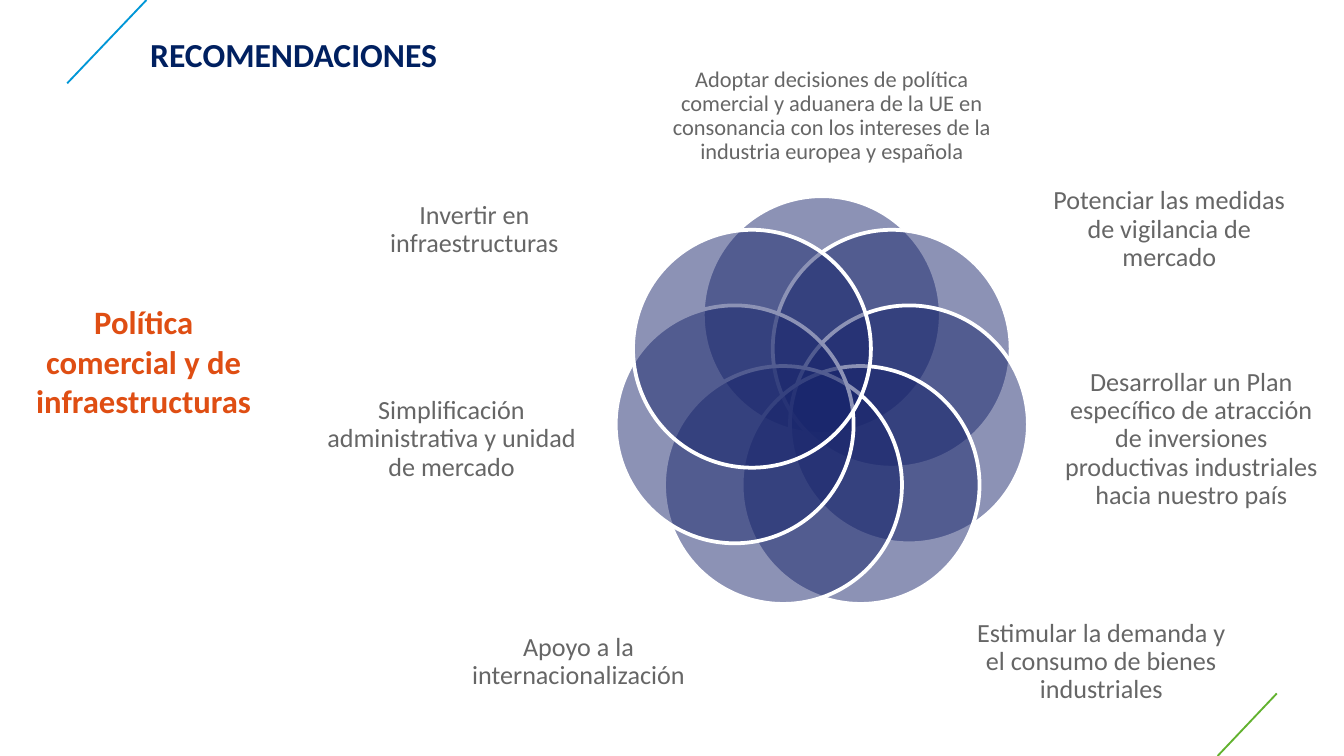
import math

import pptx
import pptx.util
import pptx.dml.color
import pptx.enum.shapes
import pptx.enum.text
import pptx.oxml.ns
from lxml import etree

Inches, Pt = pptx.util.Inches, pptx.util.Pt
SHAPE = pptx.enum.shapes.MSO_SHAPE
ANCHOR = pptx.enum.text.MSO_ANCHOR
qn = pptx.oxml.ns.qn
HEX = {"navy": "002060", "petal": "1A276D", "white": "FFFFFF", "grey": "666666",
       "orange": "DF4E13", "blue": "0097D7", "green": "62B22F"}


def tint(name):
    return pptx.dml.color.RGBColor.from_string(HEX[name])


def label(box, words, size, color, bold=False):
    """Add a centred, wrapping text box and return its frame."""
    frame = slide.shapes.add_textbox(*map(Inches, box)).text_frame
    frame.word_wrap = True
    para = frame.paragraphs[0]
    para.text = words
    para.alignment = pptx.enum.text.PP_ALIGN.CENTER
    font = para.runs[0].font
    font.name, font.size, font.bold = "Calibri", Pt(size), bold
    font.color.rgb = tint(color)
    return frame


# A 16:9 slide
wide = 10
high = wide * 9 / 16
deck = pptx.Presentation()
deck.slide_width, deck.slide_height = Inches(wide), Inches(high)
slide = deck.slides.add_slide(deck.slide_layouts[6])

# Corner lines
for ends, color in [((0.5, 0.62, 1.09, 0), "blue"), ((9.06, high, 9.5, 5.16), "green")]:
    line = slide.shapes.add_connector(pptx.enum.shapes.MSO_CONNECTOR.STRAIGHT,
                                      *map(Inches, ends))
    line.line.color.rgb = tint(color)
    line.line.width = Pt(1)
    etree.SubElement(line._element.spPr, qn("a:effectLst"))

label((0.82, 0.2, 2.73, 0.5), "RECOMENDACIONES", 18, "navy", True)

# Seven circles, clockwise from the top, each with its advice
mid_x, mid_y, ring, size = 6.115, 3.01, 0.665, 1.77
advice = [
    ((4.97, 0.32, 2.44, 1.09), 12, "Adoptar decisiones de política comercial y aduanera "
     "de la UE en consonancia con los intereses de la industria europea y española"),
    ((7.74, 1.11, 1.92, 1.2), 14, "Potenciar las medidas de vigilancia de mercado"),
    ((7.91, 2.63, 1.91, 1.28), 14, "Desarrollar un Plan específico de atracción de "
     "inversiones productivas industriales hacia nuestro país"),
    ((7.18, 4.34, 2.03, 1.17), 14,
     "Estimular la demanda y el consumo de bienes industriales"),
    ((3.29, 4.34, 2.03, 1.17), 14, "Apoyo a la internacionalización"),
    ((2.42, 2.63, 1.88, 1.28), 14, "Simplificación administrativa y unidad de mercado"),
    ((2.57, 1.11, 1.92, 1.2), 14, "Invertir en infraestructuras"),
]
for i, (box, points, words) in enumerate(advice):
    turn = 2 * math.pi * i / len(advice)
    left = mid_x + ring * math.sin(turn) - size / 2
    top = mid_y - ring * math.cos(turn) - size / 2
    disc = slide.shapes.add_shape(SHAPE.OVAL, *map(Inches, (left, top, size, size)))
    disc.shadow.inherit = False
    disc.fill.solid()
    disc.fill.fore_color.rgb = tint("petal")
    color = disc._element.spPr.find(qn("a:solidFill"))[0]
    etree.SubElement(color, qn("a:alpha"), val="50000")
    disc.line.color.rgb = tint("white")
    disc.line.width = Pt(2)

    frame = label(box, words, points, "grey")
    frame.vertical_anchor = ANCHOR.MIDDLE
    frame.margin_left = frame.margin_right = frame.margin_top = frame.margin_bottom = 0
    frame.paragraphs[0].line_spacing = 0.9

label((0.11, 2.2, 1.92, 0.99), "Política comercial y de infraestructuras",
      17.5, "orange", True)

deck.save("out.pptx")
